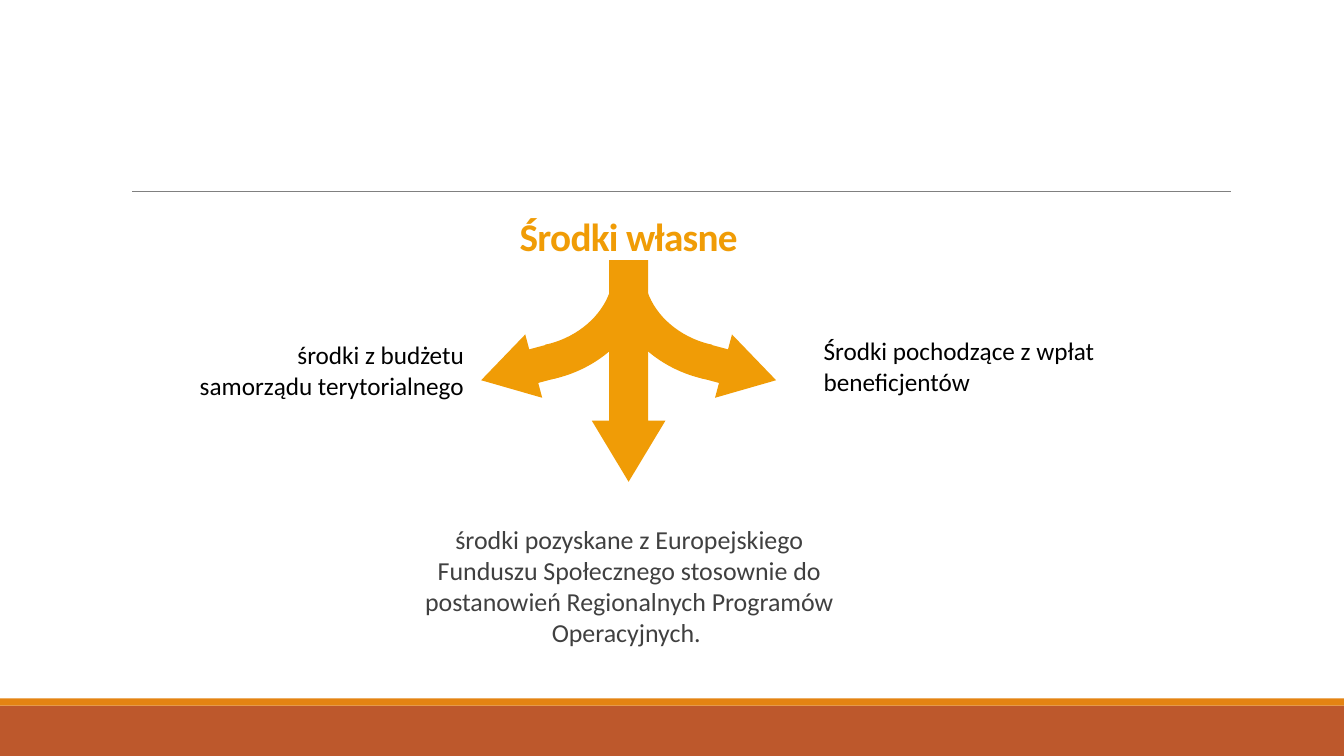
from pptx import Presentation, util as u
from pptx.dml.color import RGBColor
from pptx.enum import shapes, text
from pptx.oxml.ns import qn
from lxml import etree

WIDTH, HEIGHT = 13.33, 7.5
AXIS = 6.235
BAND_TOP, STRIPE = 7, 0.07
ORANGE = "F09C06"
KINDS = shapes.MSO_SHAPE
ALIGN = text.PP_ALIGN

presentation = Presentation()
presentation.slide_width = u.Inches(WIDTH)
presentation.slide_height = u.Inches(HEIGHT)
slide = presentation.slides.add_slide(presentation.slide_layouts[6])


def add_filled(kind, left, top, width, height, color, adjustments=(), rotation=0, flipped=False):
    shape = slide.shapes.add_shape(kind, *map(u.Inches, (left, top, width, height)))
    shape.shadow.inherit = False
    shape.fill.solid()
    shape.fill.fore_color.rgb = RGBColor.from_string(color)
    shape.line.fill.background()
    for index, value in enumerate(adjustments):
        shape.adjustments[index] = value
    shape.rotation = rotation
    if flipped:
        shape._element.spPr.xfrm.set("flipH", "1")


def add_label(wording, left, top, width, height, size, color, alignment, side_inset=0.1):
    box = slide.shapes.add_textbox(*map(u.Inches, (left, top, width, height)))
    frame = box.text_frame
    frame.word_wrap = True
    frame.margin_left = frame.margin_right = u.Inches(side_inset)
    paragraph = frame.paragraphs[0]
    paragraph.alignment = alignment
    run = paragraph.add_run()
    run.text = wording
    run.font.name = "Calibri"
    run.font.size = u.Pt(size)
    run.font.color.rgb = RGBColor.from_string(color)
    return frame


add_filled(KINDS.RECTANGLE, 0, BAND_TOP, WIDTH, HEIGHT - BAND_TOP, "BD582C")
add_filled(KINDS.RECTANGLE, 0, BAND_TOP - STRIPE, WIDTH, STRIPE, "E48312")

rule = slide.shapes.add_connector(
    shapes.MSO_CONNECTOR.STRAIGHT, *map(u.Inches, (1.31, 1.9, 12.21, 1.9)))
rule.line.color.rgb = RGBColor.from_string("808080")
rule.line.width = u.Pt(0.5)
etree.SubElement(rule._element.spPr, qn("a:effectLst"))

title = add_label("Środki własne", 1.17, 1.65, 10.13, 0.97, 28, ORANGE, ALIGN.CENTER)
title.vertical_anchor = text.MSO_ANCHOR.BOTTOM
heading = title.paragraphs[0]
heading.line_spacing = 0.85
heading.runs[0].font.bold = True
heading.runs[0]._r.get_or_add_rPr().set("spc", "-50")

add_label("środki pozyskane z Europejskiego Funduszu Społecznego stosownie do "
          "postanowień Regionalnych Programów Operacyjnych. ",
          4.04, 5.14, 4.4, 1.41, 18.5, "404040", ALIGN.CENTER, 0)

arrow_head = (0.53, 0.83)
arc_sweep = (159.5, 201.77, 0.17)
branch_parts = [
    (KINDS.BLOCK_ARC, 6.03, 1.73, 2.32, 2.05, arc_sweep, 195),
    (KINDS.DOWN_ARROW, 7.01, 3.3, 0.65, 0.75, arrow_head, 285),
]
for kind, left, top, width, height, adjustments, rotation in branch_parts:
    mirrored_left = 2 * AXIS - left - width
    add_filled(kind, left, top, width, height, ORANGE, adjustments, rotation)
    add_filled(kind, mirrored_left, top, width, height, ORANGE, adjustments, 360 - rotation, True)
add_filled(KINDS.DOWN_ARROW, AXIS - 0.365, 2.58, 0.73, 2.2, ORANGE, arrow_head)

add_label("środki z budżetu samorządu terytorialnego",
          1.7, 3.32, 3, 0.71, 18, "000000", ALIGN.RIGHT)
add_label("Środki pochodzące z wpłat beneficjentów",
          8.07, 3.28, 2.89, 0.71, 18, "000000", ALIGN.LEFT)

presentation.save("out.pptx")
